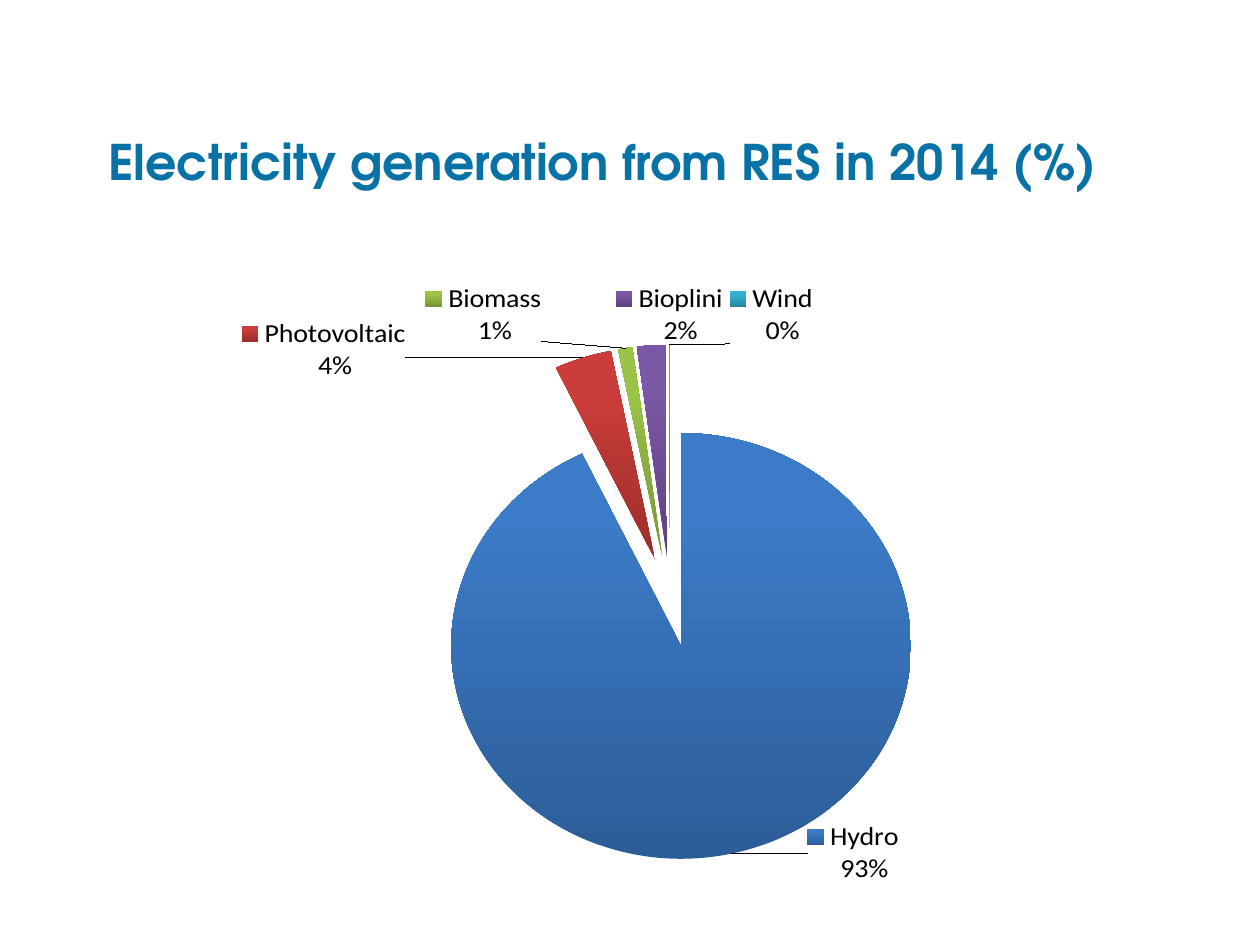
from dataclasses import dataclass

from lxml.etree import _Element
from pptx import Presentation
from pptx.chart.data import CategoryChartData
from pptx.chart.series import PieSeries
from pptx.dml.color import RGBColor
from pptx.enum.chart import XL_CHART_TYPE, XL_LABEL_POSITION
from pptx.enum.text import MSO_ANCHOR, PP_ALIGN
from pptx.oxml import parse_xml
from pptx.oxml.ns import nsdecls, qn
from pptx.slide import Slide
from pptx.util import Inches, Pt


@dataclass
class Slice:
    name: str
    value: float
    dark: str
    light: str
    dx: float
    dy: float


SLICES = [
    Slice("Hydro", 93, "2C5D98", "3C7BC7", 0.08, -0.04),
    Slice("Photovoltaic", 4, "9B2D2A", "CB3D3A", -0.19, 0.05),
    Slice("Biomass", 1, "769535", "9BC348", -0.09, 0),
    Slice("Bioplini", 2, "5D417E", "7B58A6", 0.02, 0),
    Slice("Wind", 0.1, "2787A0", "36B1D2", 0.11, 0.01),
]
TITLE = {"name": "TeX Gyre Adventor", "size": Pt(28), "bold": True}
LABEL = {"name": "Calibri", "size": Pt(16), "bold": False}
FLAGS = {"showLegendKey": 1, "showVal": 0, "showCatName": 1, "showPercent": 1}
PLOT = {"x": 0.215, "y": 0.101, "w": 0.603, "h": 0.939}


def color(code: str) -> RGBColor:
    return RGBColor.from_string(code)


def style(font, form: dict, code: str) -> None:
    for key, value in form.items():
        setattr(font, key, value)
    font.color.rgb = color(code)


def node(tag: str, body: str) -> _Element:
    return parse_xml(f"<c:{tag} {nsdecls('c')} {body}</c:{tag}>")


def layout(spots: dict, extra: str = "") -> _Element:
    vals = "".join(f'<c:{key} val="{val}"/>' for key, val in spots.items())
    return node("layout", f"><c:manualLayout>{extra}{vals}</c:manualLayout>")


def flag(root: _Element) -> None:
    for key, value in FLAGS.items():
        root.find(qn(f"c:{key}")).set("val", str(value))


def draw_title(slide: Slide, text: str) -> None:
    box = slide.shapes.add_textbox(Inches(0.28), Inches(0.92), Inches(9), Inches(0.71))
    frame = box.text_frame
    frame.word_wrap = True
    frame.vertical_anchor = MSO_ANCHOR.MIDDLE
    para = frame.paragraphs[0]
    para.alignment = PP_ALIGN.CENTER
    run = para.add_run()
    run.text = text
    style(run.font, TITLE, "0872A6")


def draw_slice(series: PieSeries, index: int, item: Slice) -> None:
    point = series.points[index]
    fill = point.format.fill
    fill.gradient()
    fill.gradient_angle = 90
    for stop, code, place in zip(fill.gradient_stops, (item.dark, item.light), (0, 0.8)):
        stop.color.rgb = color(code)
        stop.position = place
    point.format.line.fill.background()

    label = point.data_label
    style(label.font, LABEL, "000000")
    label.position = XL_LABEL_POSITION.OUTSIDE_END
    root = series._element.find(qn("c:dLbls")).findall(qn("c:dLbl"))[index]
    flag(root)
    root.find(qn("c:idx")).addnext(layout({"x": item.dx, "y": item.dy}))
    root.append(node("separator", ">\n"))


def draw_chart(slide: Slide) -> None:
    data = CategoryChartData()
    data.categories = [item.name for item in SLICES]
    data.add_series("Series 1", [item.value for item in SLICES])
    chart = slide.shapes.add_chart(
        XL_CHART_TYPE.PIE, Inches(1.54), Inches(2.18), Inches(7.32), Inches(5.15), data
    ).chart
    chart.has_title = False
    chart.has_legend = False
    style(chart.font, LABEL, "000000")
    plot = chart.plots[0]
    plot.vary_by_categories = True
    series = plot.series[0]
    series._element.find(qn("c:tx")).addnext(node("explosion", 'val="21">'))
    labels = series.data_labels
    style(labels.font, LABEL, "000000")
    labels.position = XL_LABEL_POSITION.OUTSIDE_END
    flag(labels._element)
    for index, item in enumerate(SLICES):
        draw_slice(series, index, item)

    area = chart._chartSpace.chart.plotArea
    for old in area.findall(qn("c:layout")):
        area.remove(old)
    modes = '<c:layoutTarget val="inner"/><c:xMode val="edge"/><c:yMode val="edge"/>'
    area.insert(0, layout(PLOT, modes))


def main() -> None:
    deck = Presentation()
    deck.slide_width = Inches(10)
    deck.slide_height = Inches(7.5)
    slide = deck.slides.add_slide(deck.slide_layouts[6])
    draw_title(slide, "Electricity generation from RES in 2014 (%)")
    draw_chart(slide)
    deck.save("out.pptx")


if __name__ == "__main__":
    main()
